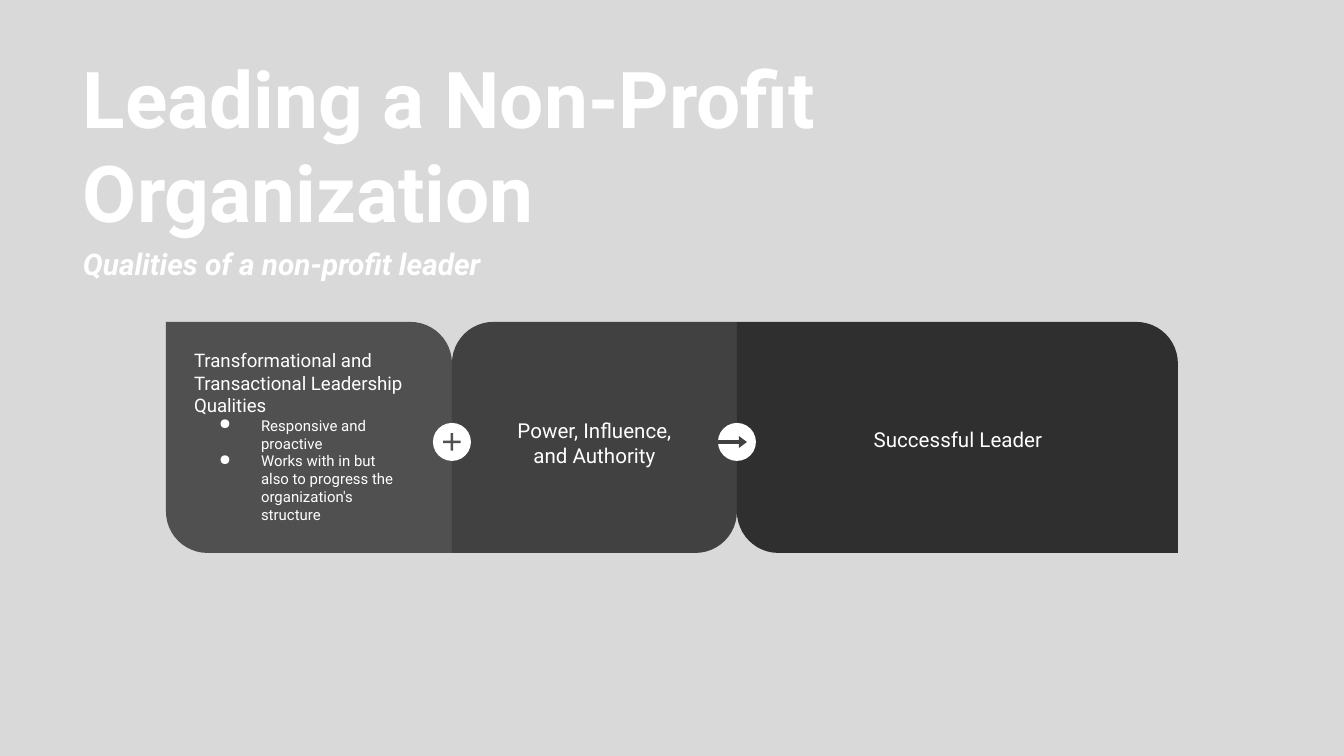
from lxml.etree import SubElement
from pptx import Presentation
from pptx.dml.color import RGBColor
from pptx.enum.shapes import MSO_SHAPE
from pptx.enum.text import MSO_ANCHOR, PP_ALIGN
from pptx.oxml.ns import qn
from pptx.util import Emu, Pt

SCALE = 914400 / 134.4
COLORS = {"page": "D9D9D9", "white": "FFFFFF", "left": "505050",
          "middle": "414141", "right": "2F2F2F"}


def px(*lengths):
    return [Emu(round(length * SCALE)) for length in lengths]


def write(box, text, size, bold=False, italic=False, align=PP_ALIGN.LEFT,
          space=0, bullet=False):
    frame = box.text_frame
    first = frame.paragraphs[0]
    para = frame.add_paragraph() if first.runs else first
    if bullet:
        indent, hanging = px(67, 42)
        props = para._p.get_or_add_pPr()
        props.set("marL", str(indent))
        props.set("indent", str(-hanging))
        SubElement(props, qn("a:buChar")).set("char", "●")
    para.alignment = align
    if space:
        para.space_before = para.space_after = Pt(space)
    span = para.add_run()
    span.text = text
    span.font.name = "Roboto"
    span.font.size = Pt(size)
    span.font.bold = bold
    span.font.italic = italic
    span.font.color.rgb = RGBColor.from_string(COLORS["white"])


deck = Presentation()
deck.slide_width, deck.slide_height = px(1344, 756)
page = deck.slides.add_slide(deck.slide_layouts[6])
page.background.fill.solid()
page.background.fill.fore_color.rgb = RGBColor.from_string(COLORS["page"])

# Three touching panels, then the plus and arrow badges on their seams
DIAGONAL = MSO_SHAPE.ROUND_2_DIAG_RECTANGLE
shapes = [
    (DIAGONAL, (166, 322, 286, 231), "left", (0, 0.18)),
    (DIAGONAL, (452, 322, 285, 231), "middle", (0.18, 0)),
    (DIAGONAL, (737, 322, 441, 231), "right", (0, 0.18)),
    (MSO_SHAPE.OVAL, (433, 423, 38, 38), "white", ()),
    (MSO_SHAPE.MATH_PLUS, (440, 430, 24, 24), "left", (0.1,)),
    (MSO_SHAPE.OVAL, (718, 423, 38, 38), "white", ()),
    (MSO_SHAPE.RIGHT_ARROW, (718, 436, 29, 12), "middle", (0.32, 0.67)),
]
for kind, place, color, adjustments in shapes:
    shape = page.shapes.add_shape(kind, *px(*place))
    shape.shadow.inherit = False
    shape.fill.solid()
    shape.fill.fore_color.rgb = RGBColor.from_string(COLORS[color])
    shape.line.fill.background()
    for index, value in enumerate(adjustments):
        shape.adjustments[index] = value

# Text boxes for the heading and each panel
places = [(70, 109, 1208, 113), (181, 336, 237, 202),
          (488, 405, 213, 67), (842, 415, 232, 46)]
boxes = []
for place in places:
    box = page.shapes.add_textbox(*px(*place))
    frame = box.text_frame
    frame.word_wrap = True
    (frame.margin_left, frame.margin_right,
     frame.margin_top, frame.margin_bottom) = px(13, 13, 13, 13)
    boxes.append(box)
heading, qualities, power, leader = boxes

# Heading
heading.text_frame.vertical_anchor = MSO_ANCHOR.MIDDLE
write(heading, "Leading a Non-Profit Organization", 42, bold=True)
write(heading, "Qualities of a non-profit leader", 16, bold=True, italic=True, space=4)

# Panel wording
write(qualities, "Transformational and Transactional Leadership Qualities", 10)
for quality in ("Responsive and proactive",
                "Works with in but also to progress the organization's structure"):
    write(qualities, quality, 8, bullet=True)
write(power, "Power, Influence, and Authority", 11, align=PP_ALIGN.CENTER)
write(leader, "Successful Leader", 11, align=PP_ALIGN.CENTER)

deck.save("out.pptx")
